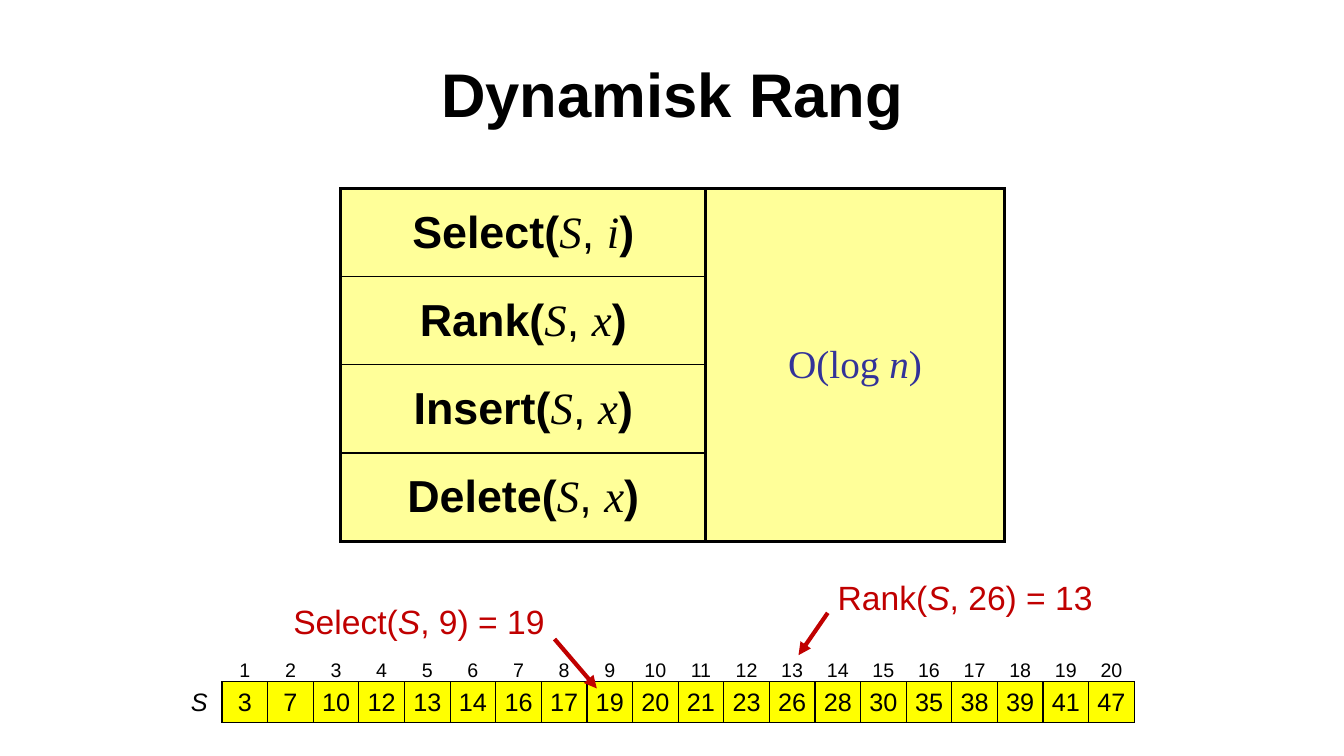
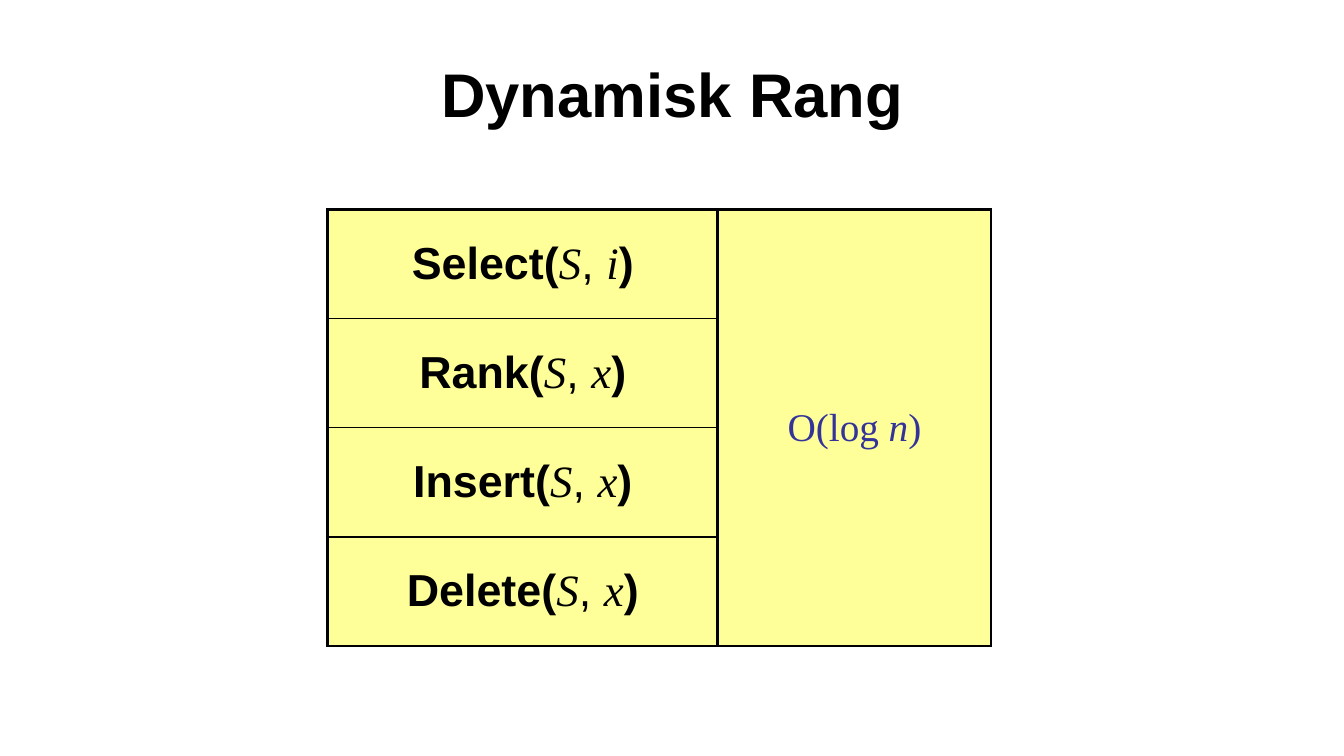
from lxml import etree
from pptx import Presentation
from pptx.dml.color import RGBColor
from pptx.enum.shapes import MSO_CONNECTOR
from pptx.enum.text import MSO_ANCHOR, PP_ALIGN
from pptx.oxml.ns import qn
from pptx.util import Inches, Pt

BLACK = RGBColor(0x00, 0x00, 0x00)
WHITE = RGBColor(0xFF, 0xFF, 0xFF)
PALE_YELLOW = RGBColor(0xFF, 0xFF, 0x99)
YELLOW = RGBColor(0xFF, 0xFF, 0x00)
INDIGO = RGBColor(0x33, 0x33, 0x99)
RED = RGBColor(0xC0, 0x00, 0x00)
SANS, SERIF = "Arial", "Times New Roman"
LEFT, CENTER, RIGHT = PP_ALIGN.LEFT, PP_ALIGN.CENTER, PP_ALIGN.RIGHT
MIDDLE, BOTTOM = MSO_ANCHOR.MIDDLE, MSO_ANCHOR.BOTTOM
STRAIGHT = MSO_CONNECTOR.STRAIGHT
THIN, THICK = 1, 2.25

OPERATIONS = [("Select", "i"), ("Rank", "x"), ("Insert", "x"), ("Delete", "x")]
SORTED_SET = [3, 7, 10, 12, 13, 14, 16, 17, 19, 20,
              21, 23, 26, 28, 30, 35, 38, 39, 41, 47]


def add_runs(paragraph, align, size, color, runs):
    """Fill a paragraph with runs of (text, font name, bold, italic)."""
    paragraph.alignment = align
    for text, name, bold, italic in runs:
        run = paragraph.add_run()
        run.text = text
        font = run.font
        font.name, font.size = name, Pt(size)
        font.bold, font.italic = bold, italic
        font.color.rgb = color


def style_cell(cell, fill, anchor, side_margin, borders):
    """Set fill, anchor, margins and borders, given as {side letter: points}."""
    cell.vertical_anchor = anchor
    cell.margin_left = cell.margin_right = Inches(side_margin)
    cell.margin_top = cell.margin_bottom = 0
    properties = cell._tc.get_or_add_tcPr()
    for side in "LRTB":
        line = etree.SubElement(properties, qn(f"a:ln{side}"))
        if side in borders:
            line.set("w", str(Pt(borders[side])))
            solid = etree.SubElement(line, qn("a:solidFill"))
            etree.SubElement(solid, qn("a:srgbClr"), val=str(BLACK))
        else:
            etree.SubElement(line, qn("a:noFill"))
    cell.fill.solid()
    cell.fill.fore_color.rgb = fill


prs = Presentation()
prs.slide_width, prs.slide_height = Inches(13.33), Inches(7.5)

# Both slides: title and table of operations with their running time
# Each entry: table left, top, height and the two column widths
for left, top, height, widths in [(3.38, 1.87, 3.5, (3.62, 2.96)),
                                  (3.25, 2.08, 4.33, (3.87, 2.71))]:
    slide = prs.slides.add_slide(prs.slide_layouts[5])
    title = slide.shapes.title
    title.left, title.top = Inches(0.67), Inches(0.3)
    title.width, title.height = Inches(12), Inches(1.25)
    title.text_frame.vertical_anchor = MIDDLE
    add_runs(title.text_frame.paragraphs[0], CENTER, 44, BLACK,
             [("Dynamisk Rang", SANS, True, False)])

    operations = slide.shapes.add_table(
        len(OPERATIONS), 2, Inches(left), Inches(top),
        Inches(sum(widths)), Inches(height)).table
    operations.first_row = operations.horz_banding = False
    for column, width in zip(operations.columns, widths):
        column.width = Inches(width)

    last = len(OPERATIONS) - 1
    for row, (operation, argument) in enumerate(OPERATIONS):
        name_cell, time_cell = operations.cell(row, 0), operations.cell(row, 1)
        style_cell(name_cell, PALE_YELLOW, MIDDLE, 0.1,
                   {"L": THICK, "R": THICK,
                    "T": THICK if row == 0 else THIN,
                    "B": THICK if row == last else THIN})
        style_cell(time_cell, PALE_YELLOW, MIDDLE, 0.1,
                   dict.fromkeys("LRTB", THICK))
        add_runs(name_cell.text_frame.paragraphs[0], CENTER, 32, BLACK,
                 [(f"{operation}(", SANS, True, False),
                  ("S", SERIF, False, True),
                  (", ", SANS, False, False),
                  (argument, SERIF, False, True),
                  (")", SANS, True, False)])
    running_time = operations.cell(0, 1)
    running_time.merge(operations.cell(last, 1))
    add_runs(running_time.text_frame.paragraphs[0], CENTER, 28, INDIGO,
             [("O(log ", SERIF, False, False),
              ("n", SERIF, False, True),
              (")", SERIF, False, False)])

# First slide: the sorted set S with its ranks
slide = prs.slides[0]
column_count = len(SORTED_SET) + 1
ranked_set = slide.shapes.add_table(
    2, column_count, Inches(1.75), Inches(6.36), Inches(9.5), Inches(0.81)).table
ranked_set.first_row = ranked_set.horz_banding = False
for column in ranked_set.columns:
    column.width = Inches(9.5 / column_count)

style_cell(ranked_set.cell(0, 0), WHITE, MIDDLE, 0, {})
set_label = ranked_set.cell(1, 0)
style_cell(set_label, WHITE, MIDDLE, 0, {"R": THIN})
add_runs(set_label.text_frame.paragraphs[0], CENTER, 18, BLACK,
         [("S", SANS, False, True)])
for rank, element in enumerate(SORTED_SET, start=1):
    for row, value, size, fill, anchor, sides in [
            (0, rank, 14, WHITE, BOTTOM, "B"),
            (1, element, 18, YELLOW, MIDDLE, "LRTB")]:
        cell = ranked_set.cell(row, rank)
        style_cell(cell, fill, anchor, 0, dict.fromkeys(sides, THIN))
        add_runs(cell.text_frame.paragraphs[0], CENTER, size, BLACK,
                 [(str(value), SANS, False, False)])

# First slide: example queries, each with an arrow into the set
for operation, result, left, top, width, align, start, end in [
        ("Select(", ", 9) = 19", 1.83, 5.91, 3.67, RIGHT, (5.5, 6.34), (5.92, 6.83)),
        ("Rank(", ", 26) = 13", 8.21, 5.67, 3, LEFT, (8.21, 6.08), (7.92, 6.5))]:
    query = slide.shapes.add_textbox(
        Inches(left), Inches(top), Inches(width), Inches(0.5)).text_frame
    query.word_wrap = True
    add_runs(query.paragraphs[0], align, 24, RED,
             [(operation, SANS, False, False),
              ("S", SANS, False, True),
              (result, SANS, False, False)])
    arrow = slide.shapes.add_connector(
        STRAIGHT, *[Inches(value) for value in start + end])
    arrow.line.color.rgb = RED
    arrow.line.width = Pt(3)
    etree.SubElement(arrow.line._get_or_add_ln(), qn("a:tailEnd"), type="triangle")
    etree.SubElement(arrow._element.spPr, qn("a:effectLst"))

prs.save("out.pptx")
